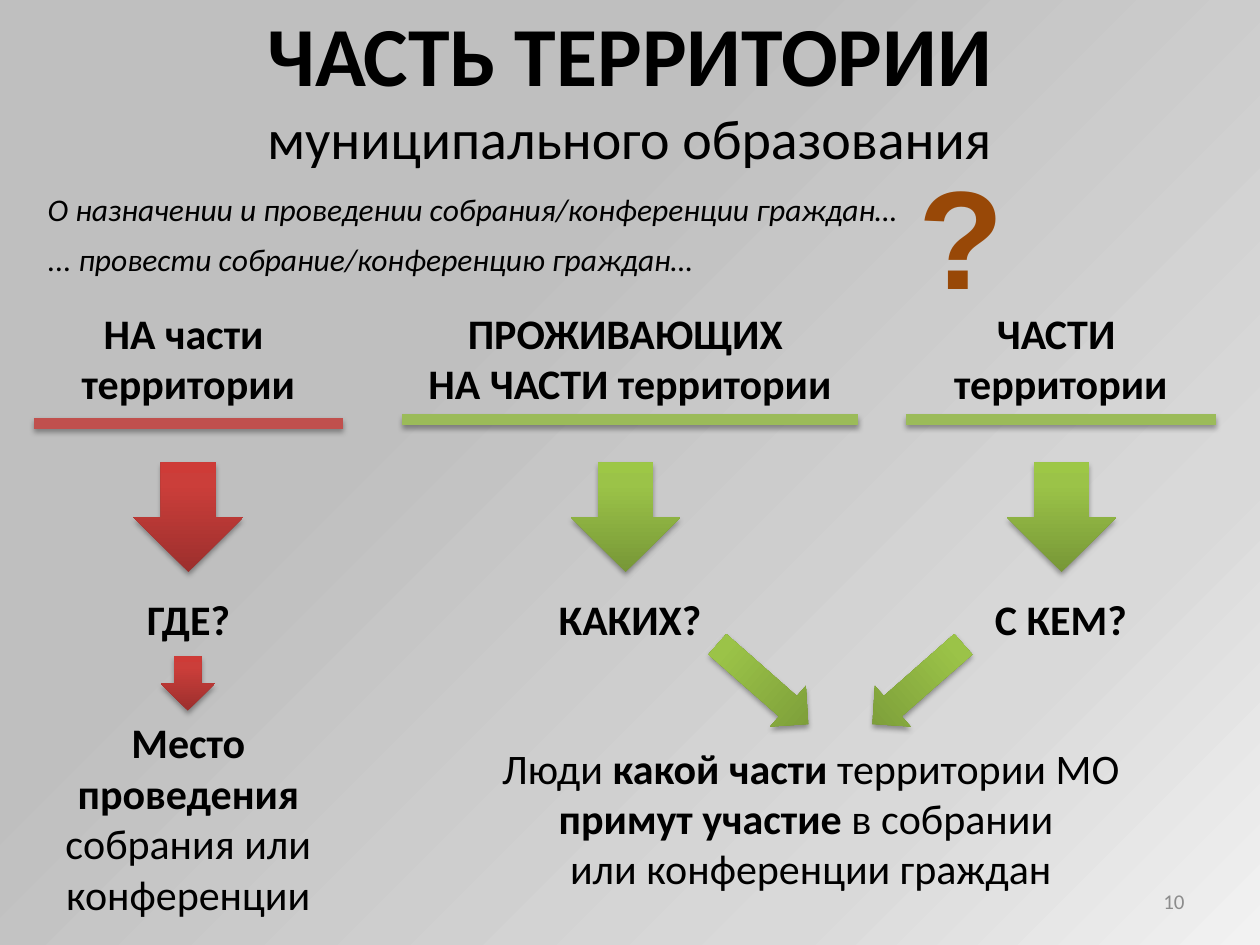
from lxml.etree import SubElement
from pptx import Presentation
from pptx.dml.color import RGBColor
from pptx.enum.shapes import MSO_CONNECTOR, MSO_SHAPE
from pptx.enum.text import MSO_ANCHOR, PP_ALIGN
from pptx.oxml.ns import qn
from pptx.util import Inches, Pt

BLACK = "000000"
RED, GREEN = "C0504D", "9BBB59"
SHADES = {
    RED: [(0, "9C2F2D"), (80, "CB3E3A"), (100, "CE3B37")],
    GREEN: [(0, "779737"), (80, "9BC348"), (100, "9DC746")],
}
LEFT, MID, RIGHT = PP_ALIGN.LEFT, PP_ALIGN.CENTER, PP_ALIGN.RIGHT


def color(code):
    return RGBColor.from_string(code)


def node(parent, tag, **attrs):
    return SubElement(parent, qn(tag), {k: str(v) for k, v in attrs.items()})


def blend(owner, stops):
    """Swap the stops of the gradient in owner; return the gradient."""
    grad = owner.find(".//" + qn("a:gradFill"))
    for child in list(grad):
        grad.remove(child)
    group = node(grad, "a:gsLst")
    for pos, code in stops:
        stop = node(group, "a:gs", pos=pos * 1000)
        node(stop, "a:srgbClr", val=code)
    return grad


def shade(shape):
    effects = node(shape.element.spPr, "a:effectLst")
    drop = node(effects, "a:outerShdw", blurRad=Pt(3.1), dist=Pt(1.8),
                dir=5400000, rotWithShape=0)
    node(node(drop, "a:srgbClr", val=BLACK), "a:alpha", val=35000)


def write(frame, paras, size, align=MID, code=BLACK, face="Calibri"):
    """Each paragraph is a list of runs: (text, styles, optional size)."""
    frame.word_wrap = True
    for i, runs in enumerate(paras):
        para = frame.paragraphs[0] if i == 0 else frame.add_paragraph()
        para.alignment = align
        for words, style, *own in runs:
            run = para.add_run()
            run.text = words
            font = run.font
            font.name, font.size = face, Pt(own[0] if own else size)
            font.bold, font.italic = "b" in style, "i" in style
            font.color.rgb = color(code)


def label(slide, box, paras, size=24, **look):
    shape = slide.shapes.add_textbox(*map(Inches, box))
    write(shape.text_frame, paras, size, **look)
    return shape


def arrow(slide, box, code, turn=0):
    shape = slide.shapes.add_shape(MSO_SHAPE.DOWN_ARROW, *map(Inches, box))
    shape.rotation = turn
    shape.fill.gradient()
    grad = blend(shape.element.spPr, SHADES[code])
    node(grad, "a:lin", ang=16200000, scaled=0)
    shape.line.fill.background()
    shade(shape)


def rule(slide, left, top, width, code):
    line = slide.shapes.add_connector(
        MSO_CONNECTOR.STRAIGHT, Inches(left), Inches(top),
        Inches(left + width), Inches(top))
    line.line.color.rgb = color(code)
    line.line.width = Pt(6)
    shade(line)


def backdrop(slide):
    slide.background.fill.gradient()
    grad = blend(slide.element,
                 [(0, "F2F2F2"), (22, "D9D9D9"), (65, "BFBFBF")])
    way = node(grad, "a:path", path="circle")
    node(way, "a:fillToRect", l=100000, t=100000)


def heading(slide, box):
    title = slide.shapes.title
    title.left, title.top, title.width, title.height = map(Inches, box)
    title.text_frame.vertical_anchor = MSO_ANCHOR.TOP
    write(title.text_frame, [[("ЧАСТЬ ТЕРРИТОРИИ", "b", 48)],
                             [("муниципального образования", "")]], 32)


def intro(slide, box):
    left, top, width, height = box
    lines = ["О назначении и проведении собрания/конференции граждан…",
             "... провести собрание/конференцию граждан…"]
    for i, words in enumerate(lines):
        label(slide, (left, top + i * height, width, height),
              [[(words, "i")]], 18, align=LEFT)
    label(slide, (7.19, 1.14, 0.9, 1.45), [[("?", "b")]], 80,
          align=LEFT, code="984807", face="Arial")


def column(slide, box, axis, code, words, ask):
    """Heading, rule, arrow and question; axis is the arrow's centre."""
    left, top, width, height = box
    label(slide, (left, top, width, 0.91), [[(w, "b")] for w in words])
    rule(slide, left, top + height, width, code)
    arrow(slide, (axis - 0.43, 3.67, 0.87, 0.87), code)
    label(slide, (left, 4.66, width, 0.5), [[(ask, "b")]])


def place(slide, box):
    left, top, width, _ = box
    arrow(slide, (left + width / 2 - 0.22, top - 0.43, 0.43, 0.43), RED)
    label(slide, box, [[("Место проведения ", "b"),
                        ("собрания или конференции", "")]])


def people(slide, box):
    for left, turn in ((5.84, 311.3), (7.07, 48.7)):
        arrow(slide, (left, 4.95, 0.43, 0.96), GREEN, turn)
    label(slide, box, [
        [("Люди ", ""), ("какой части ", "b"), ("территории МО ", "")],
        [("примут участие", "b"), (" в собрании ", "")],
        [("или конференции граждан", "")],
    ])


def number(slide, box):
    shape = label(slide, box, [[("10", "")]], 12, align=RIGHT, code="8C8C8C")
    shape.text_frame.vertical_anchor = MSO_ANCHOR.MIDDLE


def main():
    deck = Presentation()
    deck.slide_width, deck.slide_height = Inches(10), Inches(7.5)
    slide = deck.slides.add_slide(deck.slide_layouts[5])
    backdrop(slide)
    heading(slide, (0, -0.03, 10, 1.45))
    intro(slide, (0.28, 1.46, 6.98, 0.4))

    # Three wordings and the question each one answers
    column(slide, (0.27, 2.39, 2.45, 0.97), 1.49, RED,
           ["НА части ", "территории"], "ГДЕ?")
    column(slide, (3.19, 2.39, 3.62, 0.94), 4.96, GREEN,
           ["ПРОЖИВАЮЩИХ ", "НА ЧАСТИ территории"], "КАКИХ?")
    column(slide, (7.19, 2.39, 2.46, 0.94), 8.42, GREEN,
           ["ЧАСТИ ", "территории"], "С КЕМ?")

    # Answers
    place(slide, (0.06, 5.64, 2.87, 1.72))
    people(slide, (3.85, 5.84, 5.17, 1.31))
    number(slide, (7.17, 6.95, 2.33, 0.4))
    deck.save("out.pptx")


if __name__ == "__main__":
    main()
